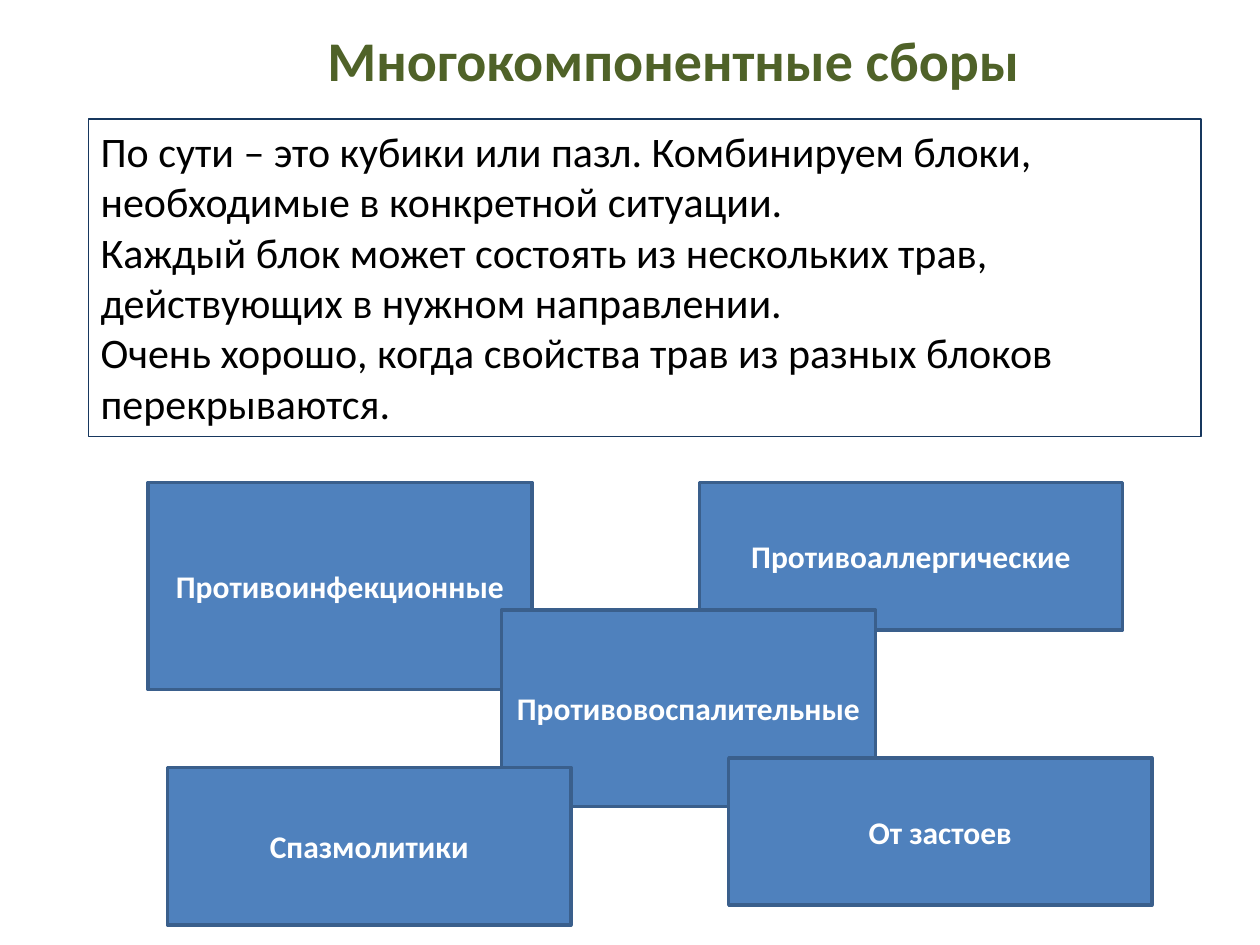
from pptx import Presentation
from pptx.dml.color import RGBColor
from pptx.enum.shapes import MSO_SHAPE
from pptx.enum.text import MSO_ANCHOR, MSO_AUTO_SIZE, PP_ALIGN
from pptx.util import Cm, Pt


def rgb(value):
    return RGBColor.from_string(value)


class Deck:
    """Holds the style and the current slide, and adds each kind of element."""

    FONT = "Calibri"
    TITLE, TEXT, WHITE = "4F6228", "000000", "FFFFFF"
    BLOCK, BLOCK_EDGE, FRAME = "4F81BD", "3A5F8C", "17375E"

    def __init__(self, prs):
        self.s = prs.slides.add_slide(prs.slide_layouts[6])

    def set_text(self, tf, text, size, color, bold=False, align=PP_ALIGN.LEFT):
        p = tf.paragraphs[0]
        p.text = text
        p.alignment = align
        p.font.name = self.FONT
        p.font.size = Pt(size)
        p.font.bold = bold
        p.font.color.rgb = rgb(color)

    def textbox(self, box):
        sp = self.s.shapes.add_textbox(*map(Cm, box))
        sp.text_frame.auto_size = MSO_AUTO_SIZE.SHAPE_TO_FIT_TEXT
        return sp

    def title(self, text, box):
        tf = self.textbox(box).text_frame
        tf.word_wrap = False
        self.set_text(tf, text, 32, self.TITLE, bold=True)

    def framed_text(self, sentences, box):
        sp = self.textbox(box)
        sp.line.color.rgb = rgb(self.FRAME)
        sp.line.width = Pt(0.75)
        sp.text_frame.word_wrap = True
        self.set_text(sp.text_frame, "\v".join(sentences), 24, self.TEXT)

    def block(self, text, box):
        sp = self.s.shapes.add_shape(MSO_SHAPE.RECTANGLE, *map(Cm, box))
        sp.shadow.inherit = False
        sp.fill.solid()
        sp.fill.fore_color.rgb = rgb(self.BLOCK)
        sp.line.color.rgb = rgb(self.BLOCK_EDGE)
        sp.line.width = Pt(2)
        tf = sp.text_frame
        tf.word_wrap = True
        tf.vertical_anchor = MSO_ANCHOR.MIDDLE
        self.set_text(tf, text, 18, self.WHITE, bold=True, align=PP_ALIGN.CENTER)


def main():
    prs = Presentation()
    prs.slide_width, prs.slide_height = Cm(25.4), Cm(19.05)
    deck = Deck(prs)
    deck.title("Многокомпонентные сборы", (6.35, 0.4, 14.6, 1.62))
    deck.framed_text(
        [
            "По сути – это кубики или пазл. Комбинируем блоки, необходимые в конкретной ситуации.",
            "Каждый блок может состоять из нескольких трав, действующих в нужном направлении.",
            "Очень хорошо, когда свойства трав из разных блоков перекрываются.",
        ],
        (1.78, 2.4, 22.43, 6.4),
    )
    blocks = [
        ("Противоинфекционные", (2.98, 9.73, 7.75, 4.17)),
        ("Противоаллергические", (14.1, 9.73, 8.53, 2.97)),
        ("Противовоспалительные", (10.11, 12.3, 7.54, 3.96)),
        ("Спазмолитики", (3.38, 15.47, 8.13, 3.18)),
        ("От застоев", (14.69, 15.28, 8.53, 2.97)),
    ]
    for text, box in blocks:
        deck.block(text, box)
    prs.save("out.pptx")


if __name__ == "__main__":
    main()
